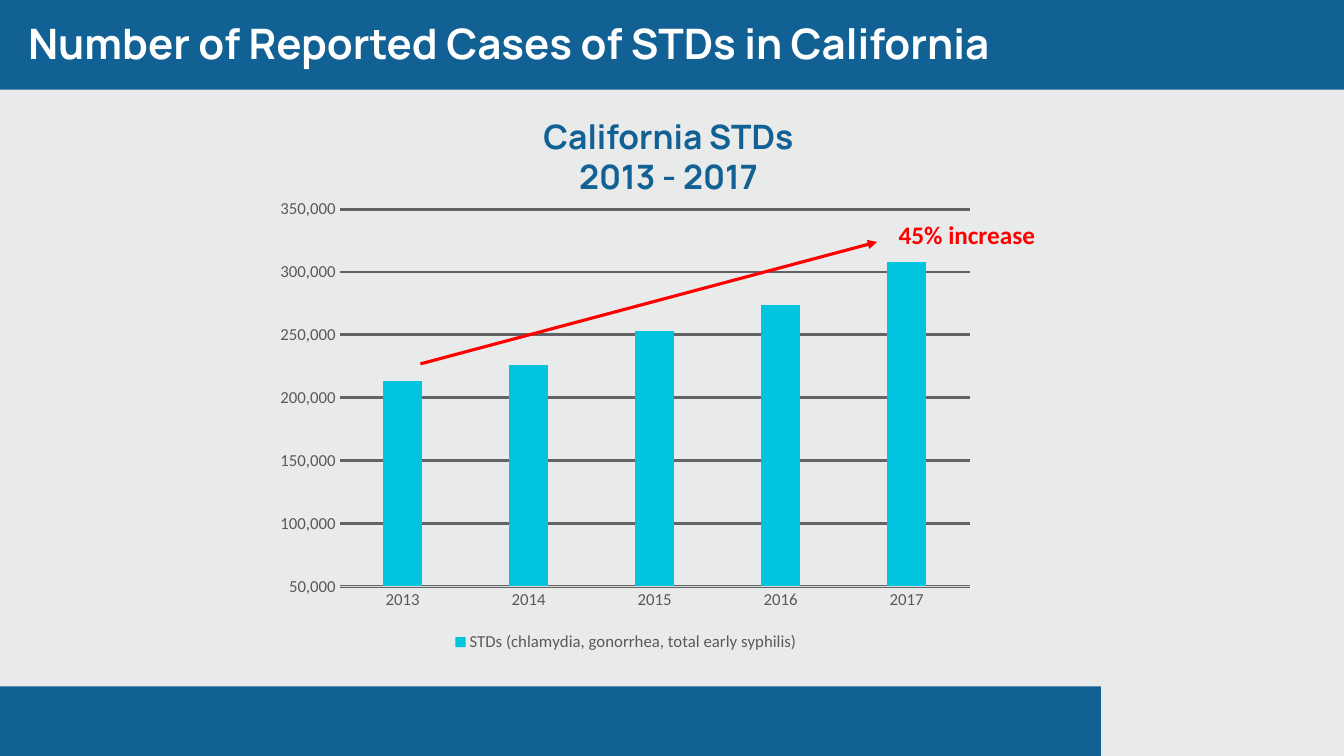
from lxml.etree import SubElement
from pptx import Presentation
from pptx.chart.data import CategoryChartData
from pptx.dml.color import RGBColor
from pptx.enum.chart import XL_CHART_TYPE, XL_LEGEND_POSITION, XL_TICK_MARK
from pptx.enum.shapes import MSO_CONNECTOR, MSO_SHAPE
from pptx.enum.text import MSO_ANCHOR, PP_ALIGN
from pptx.oxml import parse_xml
from pptx.oxml.ns import nsdecls, qn
from pptx.util import Inches, Pt

COLORS = {
    "page": "E9EAEA", "band": "126194", "bar": "00C4E0", "alert": "FF0000",
    "white": "FFFFFF", "label": "595959", "grid": "626365", "axis": "D9D9D9",
}
WIDTH, HEIGHT = 13.33, 7.5
HEADER_H, FOOTER_H = 0.89, 0.69
CASES = {"2013": 213000, "2014": 226000, "2015": 253000,
         "2016": 274000, "2017": 308000}


def color(name):
    return RGBColor.from_string(COLORS[name])


def inches(box):
    return [Inches(v) for v in box]


def style_font(font, size, name, hue, bold=False):
    font.size, font.name, font.bold = Pt(size), name, bold
    font.color.rgb = color(hue)


def add_band(slide, box):
    sp = slide.shapes.add_shape(MSO_SHAPE.RECTANGLE, *inches(box))
    sp.shadow.inherit = False
    sp.fill.solid()
    sp.fill.fore_color.rgb = color("band")
    sp.line.fill.background()


def add_text(slide, box, lines, size, font, hue, anchor, align, spacing=1.0):
    tf = slide.shapes.add_textbox(*inches(box)).text_frame
    tf.word_wrap = True
    tf.vertical_anchor = anchor
    for i, line in enumerate(lines):
        p = tf.paragraphs[0] if i == 0 else tf.add_paragraph()
        p.alignment, p.line_spacing = align, spacing
        r = p.add_run()
        r.text = line
        style_font(r.font, size, font, hue, bold=True)


def add_header(slide, box):
    x, y, w, h = box
    add_band(slide, box)
    add_text(slide, (x + 0.18, y + 0.09, w * 0.8, h - 0.15),
             ["Number of Reported Cases of STDs in California"],
             30, "Manrope", "white", MSO_ANCHOR.MIDDLE, PP_ALIGN.LEFT, 0.9)


def set_plot_area(chart, x, y, w, h):
    """Fix the inner plot area, in shares of the chart's size."""
    plot_area = chart.plots[0]._element.getparent()
    for old in plot_area.findall(qn("c:layout")):
        plot_area.remove(old)
    layout = parse_xml(f"<c:layout {nsdecls('c')}><c:manualLayout/></c:layout>")
    settings = {"layoutTarget": "inner", "xMode": "edge", "yMode": "edge",
                "x": x, "y": y, "w": w, "h": h}
    for tag, val in settings.items():
        SubElement(layout[0], qn(f"c:{tag}")).set("val", str(val))
    plot_area.insert(0, layout)


def add_cases_chart(slide, box):
    data = CategoryChartData(number_format="#,##0")
    data.categories = list(CASES)
    data.add_series("STDs (chlamydia, gonorrhea, total early syphilis)",
                    list(CASES.values()))
    chart = slide.shapes.add_chart(
        XL_CHART_TYPE.COLUMN_CLUSTERED, *inches(box), data).chart
    chart.has_title = False
    chart.font.name, chart.font.size = "Calibri", Pt(10)
    set_plot_area(chart, 0.1, 0.04, 0.88, 0.81)

    plot = chart.plots[0]
    plot.gap_width, plot.overlap, plot.vary_by_categories = 219, -27, False
    fill = plot.series[0].format.fill
    fill.solid()
    fill.fore_color.rgb = color("bar")

    years, counts = chart.category_axis, chart.value_axis
    for axis in (years, counts):
        axis.major_tick_mark = axis.minor_tick_mark = XL_TICK_MARK.NONE
        style_font(axis.tick_labels.font, 12, "Calibri", "label")
    years.format.line.color.rgb = color("axis")
    years.format.line.width = Pt(0.75)
    counts.format.line.fill.background()
    counts.minimum_scale, counts.maximum_scale = 50000, 350000
    counts.major_unit = 50000
    counts.tick_labels.number_format = "#,##0"
    counts.tick_labels.number_format_is_linked = False
    counts.has_major_gridlines = True
    grid = counts.major_gridlines.format.line
    grid.color.rgb, grid.width = color("grid"), Pt(2)

    chart.has_legend = True
    chart.legend.position = XL_LEGEND_POSITION.BOTTOM
    chart.legend.include_in_layout = False
    style_font(chart.legend.font, 12, "Calibri", "label")


def add_trend(slide, box):
    """Draw the rising arrow across the box, with its label at the upper end."""
    x, y, w, h = box
    arrow = slide.shapes.add_connector(
        MSO_CONNECTOR.STRAIGHT, *inches((x, y + h, x + w, y)))
    arrow.line.color.rgb, arrow.line.width = color("alert"), Pt(2.25)
    SubElement(arrow.line._get_or_add_ln(), qn("a:tailEnd")).set("type", "triangle")
    SubElement(arrow._element.spPr, qn("a:effectLst"))
    add_text(slide, (x + w + 0.1, y - 0.24, 1.58, 0.63), ["45% increase"],
             18, "Calibri", "alert", MSO_ANCHOR.TOP, PP_ALIGN.CENTER, 0.9)


def add_chart_region(slide, box):
    x, y, w, h = box
    add_text(slide, (x + 0.3, y + 0.53, w - 0.67, 0.58),
             ["California STDs", "2013 - 2017"],
             24, "Manrope", "band", MSO_ANCHOR.BOTTOM, PP_ALIGN.CENTER)
    add_cases_chart(slide, (x + 2.66, y + 1, 7.1, h - 1.3))
    add_trend(slide, (x + 4.17, y + 1.51, 4.53, 1.21))


def main():
    prs = Presentation()
    prs.slide_width, prs.slide_height = Inches(WIDTH), Inches(HEIGHT)
    slide = prs.slides.add_slide(prs.slide_layouts[6])
    slide.background.fill.solid()
    slide.background.fill.fore_color.rgb = color("page")
    footer_y = HEIGHT - FOOTER_H
    add_header(slide, (0, 0, WIDTH, HEADER_H))
    add_band(slide, (0, footer_y, 10.92, FOOTER_H))
    add_chart_region(slide, (0, HEADER_H, WIDTH, footer_y - HEADER_H))
    prs.save("out.pptx")


if __name__ == "__main__":
    main()
